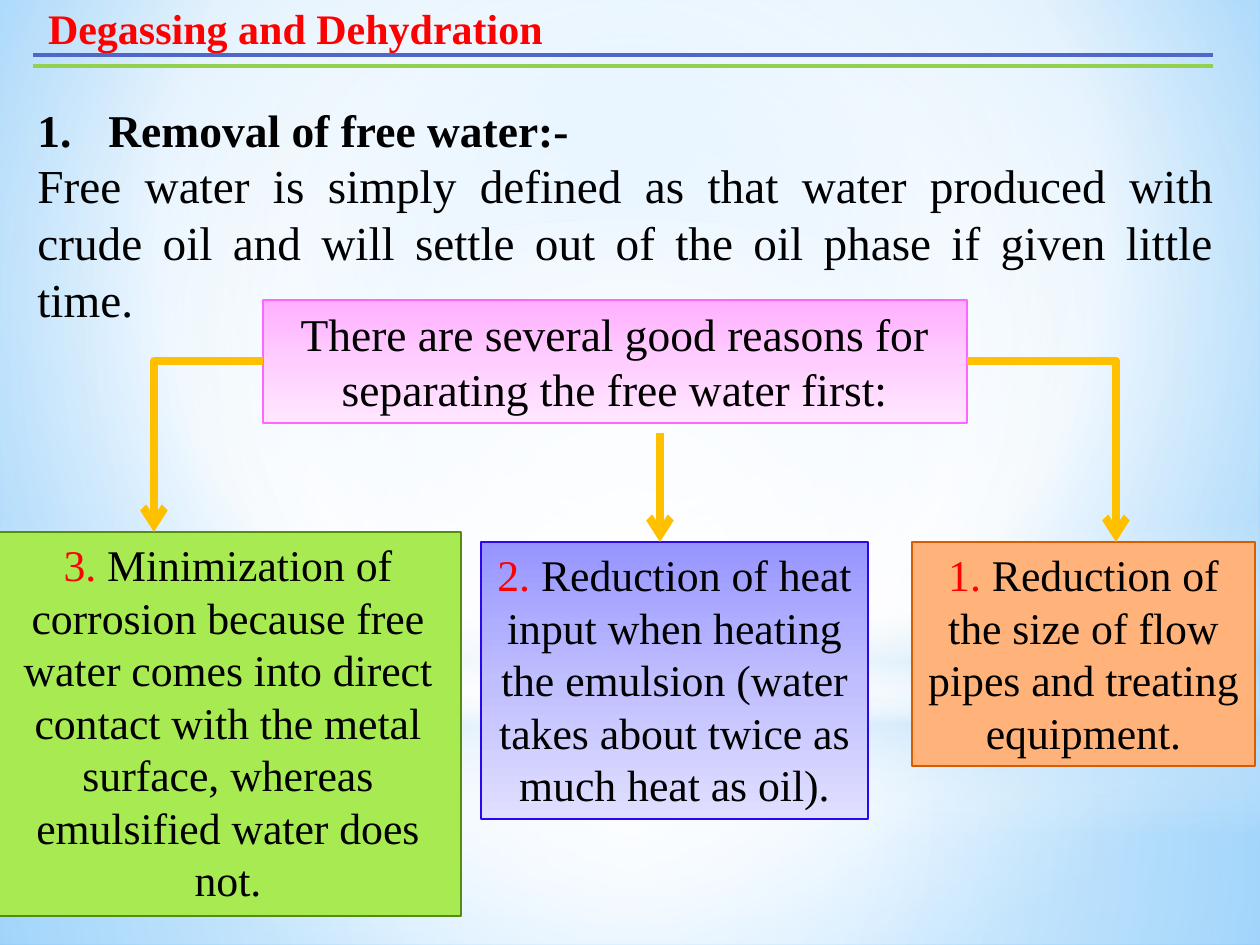
from dataclasses import dataclass
from typing import NamedTuple

from lxml.etree import SubElement
from pptx import Presentation
from pptx.dml.color import RGBColor
from pptx.enum.shapes import MSO_CONNECTOR as Cxn, MSO_SHAPE as Shape
from pptx.enum.text import MSO_ANCHOR as Anchor, PP_ALIGN as Align
from pptx.oxml.ns import qn
from pptx.util import Emu, Pt

EMU_PER_PX = 914400 / 126
WIDTH, HEIGHT = 1260, 945


@dataclass(frozen=True)
class Theme:
    font: str = "Times New Roman"
    text: str = "000000"
    accent: str = "FF0000"
    arrow: str = "FFC000"
    rules: tuple = ("4E67C8", "92D050")
    pale: str = "B4DCFA"
    white: str = "FFFFFF"
    title_size: int = 24
    heading_size: int = 26
    body_size: int = 27
    reason_size: int = 25
    rule_width: float = 2.25
    arrow_width: float = 4.5
    border_width: float = 0.75


T = Theme()


class Box(NamedTuple):
    x: int
    y: int
    w: int
    h: int


class Stop(NamedTuple):
    pos: int
    color: str
    alpha: int = 100


class Gradient(NamedTuple):
    stops: tuple
    focus: tuple = ()


class Panel(NamedTuple):
    box: Box
    fill: Gradient | str
    border: str
    text: str
    size: int
    number: str = ""


class Arrow(NamedTuple):
    start: tuple
    end: tuple


CENTER = (50, 50, 50, 50)
BACKDROP = Gradient((Stop(0, "9ED5FF"), Stop(60, T.white), Stop(100, "5BB9FF")),
                    (20, 10, 20, 60))
GLOWS = (
    (Shape.RECTANGLE, Box(0, 703, WIDTH, 242), Gradient(
        (Stop(0, T.white, 91), Stop(37, T.white, 76), Stop(100, T.pale, 79)), CENTER)),
    (Shape.RECTANGLE, Box(0, 0, WIDTH, 703), Gradient(
        (Stop(0, T.white, 89), Stop(48, T.white, 62), Stop(100, T.pale, 79)), CENTER)),
    (Shape.RECTANGLE, Box(0, 519, WIDTH, 315), Gradient(
        (Stop(0, T.white, 0), Stop(29, T.white, 30), Stop(45, T.pale, 40),
         Stop(55, T.white, 26), Stop(65, T.pale, 60), Stop(100, T.white, 0)))),
    (Shape.OVAL, Box(0, 220, WIDTH, 703), Gradient(
        (Stop(0, T.white), Stop(56, T.white, 0)), CENTER)),
)
PINK = Gradient((Stop(0, "FFAFFF"), Stop(50, "FFCEFF"), Stop(100, "FFE7FF")))
VIOLET = Gradient((Stop(0, "9795FF"), Stop(50, "BFBEFF"), Stop(100, "E0DFFF")))
PANELS = (
    Panel(Box(263, 300, 704, 123), PINK, "FF66FF",
          "There are several good reasons for separating the free water first:",
          T.heading_size),
    Panel(Box(912, 542, 343, 224), "FFB37A", "D85C00",
          "Reduction of the size of flow pipes and treating equipment.",
          T.reason_size, "1. "),
    Panel(Box(481, 542, 387, 277), VIOLET, "2908EE",
          "Reduction of heat input when heating the emulsion "
          "(water takes about twice as much heat as oil).",
          T.reason_size, "2. "),
    Panel(Box(-5, 532, 466, 384), "A7EA52", "568D11",
          "Minimization of corrosion because free water comes into direct contact "
          "with the metal surface, whereas emulsified water does not.",
          T.reason_size, "3. "),
)
ARROWS = (
    Arrow((967, 361), (1116, 542)),
    Arrow((660, 433), (660, 542)),
    Arrow((263, 361), (154, 532)),
)


def px(n: int) -> Emu:
    return Emu(round(n * EMU_PER_PX))


def rgb(color: str) -> RGBColor:
    return RGBColor.from_string(color)


def set_gradient(fill, gradient: Gradient) -> None:
    fill.gradient()
    grad = fill._fill._gradFill
    for child in list(grad):
        grad.remove(child)
    stops = SubElement(grad, qn("a:gsLst"))
    for stop in gradient.stops:
        gs = SubElement(stops, qn("a:gs"), pos=str(stop.pos * 1000))
        color = SubElement(gs, qn("a:srgbClr"), val=stop.color)
        if stop.alpha < 100:
            SubElement(color, qn("a:alpha"), val=str(stop.alpha * 1000))
    if gradient.focus:
        circle = SubElement(grad, qn("a:path"), path="circle")
        sides = {k: str(v * 1000) for k, v in zip("ltrb", gradient.focus)}
        SubElement(circle, qn("a:fillToRect"), **sides)
    else:
        SubElement(grad, qn("a:lin"), ang="5400000", scaled="0")


def add_run(p, text: str, *, size: int, color: str = T.text, bold: bool = False) -> None:
    r = p.add_run()
    r.text = text
    r.font.name, r.font.size, r.font.bold = T.font, Pt(size), bold
    r.font.color.rgb = rgb(color)


def add_filled(slide, kind: Shape, box: Box, fill: Gradient | str):
    sp = slide.shapes.add_shape(kind, *map(px, box))
    sp.shadow.inherit = False
    sp.line.fill.background()
    if isinstance(fill, Gradient):
        set_gradient(sp.fill, fill)
    else:
        sp.fill.solid()
        sp.fill.fore_color.rgb = rgb(fill)
    return sp


def add_panel(slide, panel: Panel) -> None:
    sp = add_filled(slide, Shape.RECTANGLE, panel.box, panel.fill)
    sp.line.color.rgb = rgb(panel.border)
    sp.line.width = Pt(T.border_width)
    tf = sp.text_frame
    tf.word_wrap, tf.vertical_anchor = True, Anchor.TOP
    p = tf.paragraphs[0]
    p.alignment = Align.CENTER
    if panel.number:
        add_run(p, panel.number, size=panel.size, color=T.accent)
    add_run(p, panel.text, size=panel.size)


def add_line(slide, start: tuple, end: tuple, color: str, width: float):
    bent = start[0] != end[0] and start[1] != end[1]
    kind = Cxn.ELBOW if bent else Cxn.STRAIGHT
    cxn = slide.shapes.add_connector(kind, *map(px, start + end))
    cxn.line.color.rgb = rgb(color)
    cxn.line.width = Pt(width)
    props = cxn._element.spPr
    SubElement(props, qn("a:effectLst"))
    if bent:
        props.find(qn("a:prstGeom")).set("prst", "bentConnector2")
    return cxn


def add_arrow(slide, arrow: Arrow) -> None:
    cxn = add_line(slide, arrow.start, arrow.end, T.arrow, T.arrow_width)
    SubElement(cxn.line._get_or_add_ln(), qn("a:tailEnd"), type="arrow")


def set_title(sp, text: str) -> None:
    sp.left, sp.top, sp.width, sp.height = map(px, Box(25, -4, 1201, 63))
    tf = sp.text_frame
    tf.vertical_anchor, tf.margin_left = Anchor.TOP, px(23)
    p = tf.paragraphs[0]
    p.alignment = Align.LEFT
    add_run(p, text, size=T.title_size, color=T.accent, bold=True)


def add_body(slide, heading: str, text: str) -> None:
    tf = slide.shapes.add_textbox(*map(px, Box(25, 96, 1201, 239))).text_frame
    tf.word_wrap = True
    p = tf.paragraphs[0]
    props = p._p.get_or_add_pPr()
    props.set("marL", str(px(71)))
    props.set("indent", str(px(-71)))
    SubElement(props, qn("a:buFont"), typeface="+mj-lt")
    SubElement(props, qn("a:buAutoNum"), type="arabicPeriod")
    add_run(p, heading, size=T.heading_size, bold=True)
    p = tf.add_paragraph()
    p.alignment = Align.JUSTIFY
    add_run(p, text, size=T.body_size)


def main() -> None:
    prs = Presentation()
    prs.slide_width, prs.slide_height = px(WIDTH), px(HEIGHT)
    slide = prs.slides.add_slide(prs.slide_layouts[5])
    set_gradient(slide.background.fill, BACKDROP)
    for glow in GLOWS:
        add_filled(slide, *glow)
    title = slide.shapes.title
    set_title(title, "Degassing and Dehydration")
    slide.shapes._spTree.append(title._element)
    for y, color in zip((55, 66), T.rules):
        add_line(slide, (33, y), (1213, y), color, T.rule_width)
    add_body(slide, "Removal of free water:-",
             "Free water is simply defined as that water produced with crude oil "
             "and will settle out of the oil phase if given little time.")
    for panel in PANELS:
        add_panel(slide, panel)
    for arrow in ARROWS:
        add_arrow(slide, arrow)
    prs.save("out.pptx")


if __name__ == "__main__":
    main()
